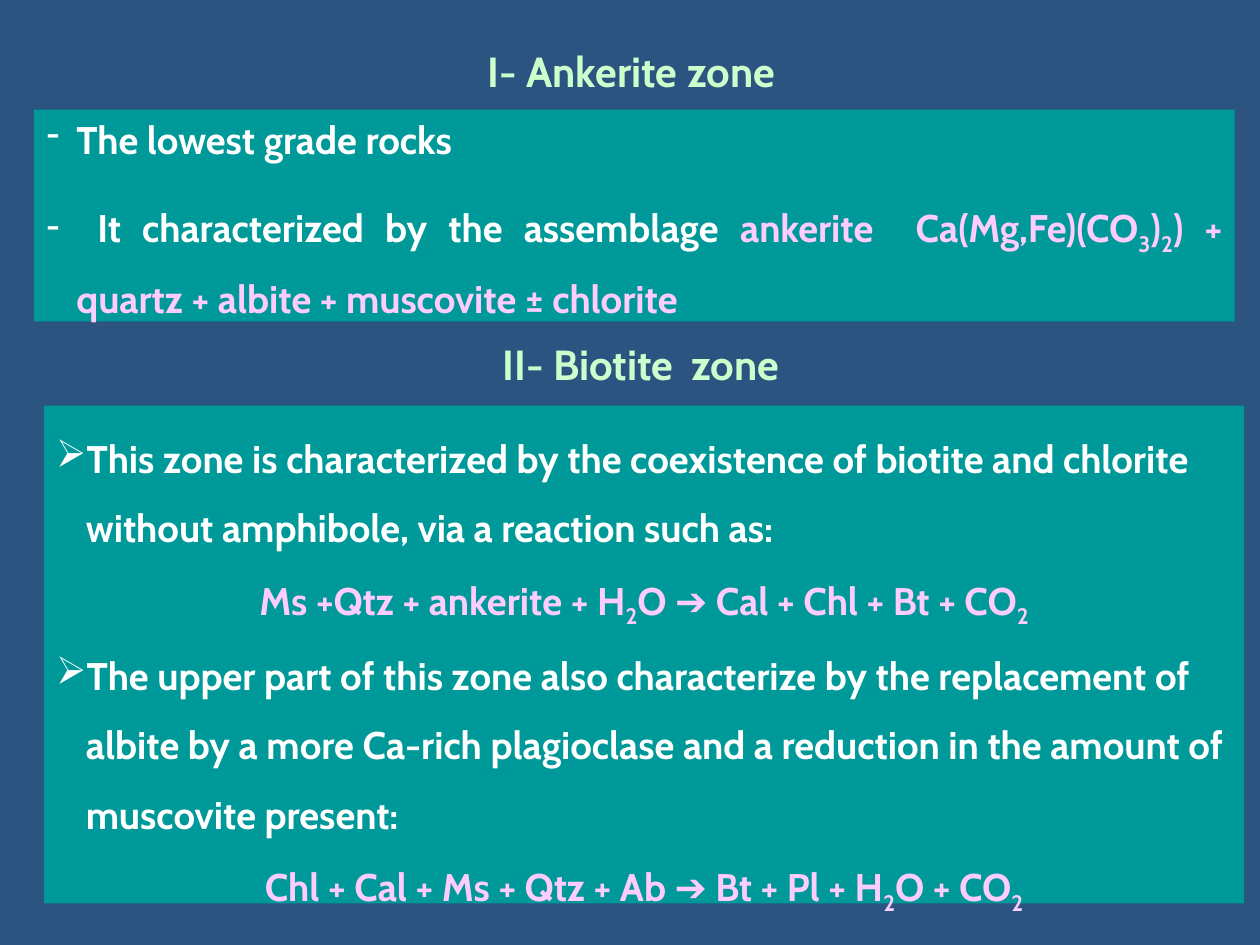
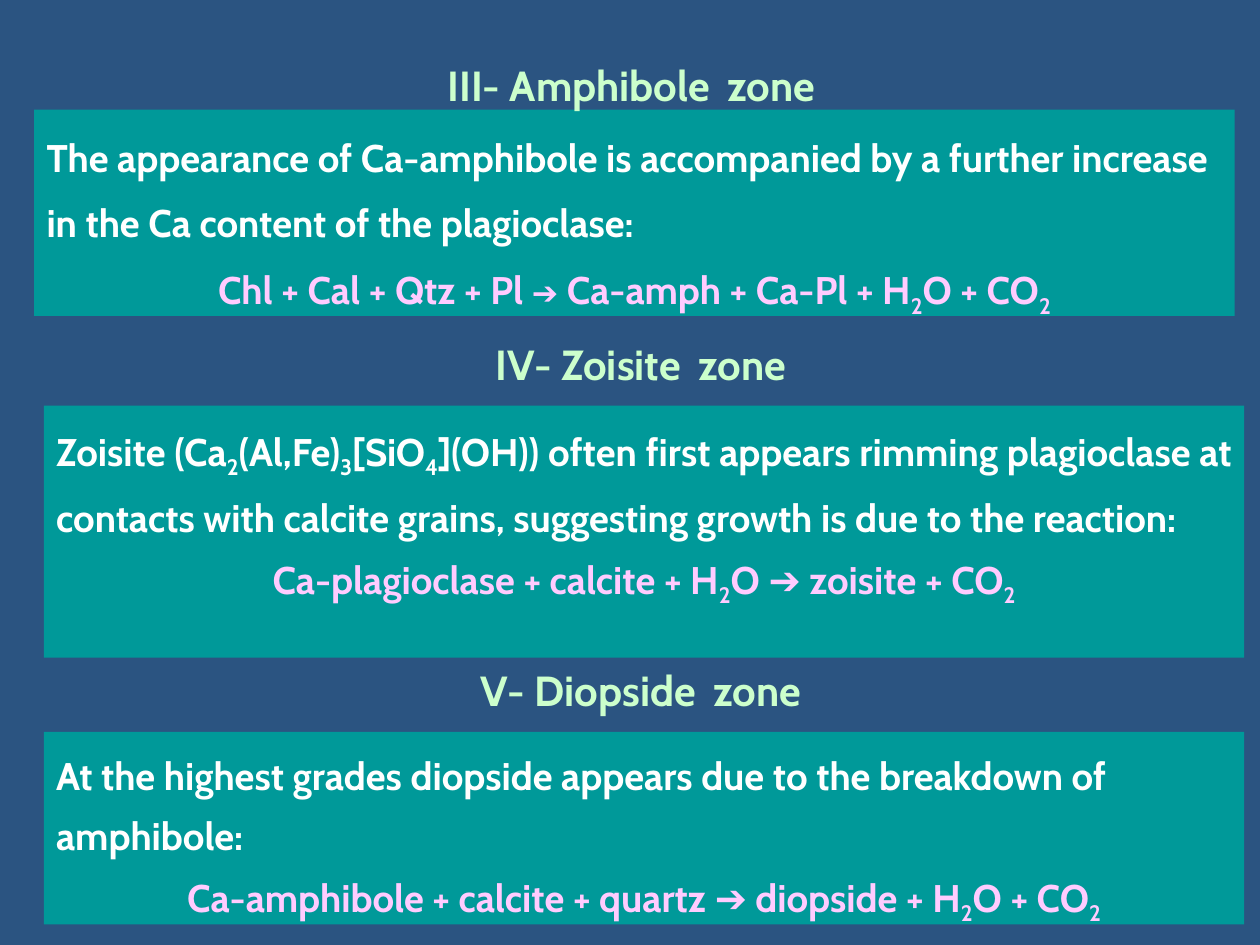
from dataclasses import dataclass

from lxml import etree
from pptx import Presentation
from pptx.dml.color import RGBColor
from pptx.enum import shapes, text
from pptx.oxml.ns import qn
from pptx.util import Pt

LEFT, MID, JUST = text.PP_ALIGN.LEFT, text.PP_ALIGN.CENTER, text.PP_ALIGN.JUSTIFY


@dataclass(frozen=True)
class Theme:
    font: str = "Cabin"
    back: str = "2B5481"
    panel: str = "009999"
    head: str = "CCFFCC"
    body: str = "FFFFFF"
    rock: str = "FFCCFF"
    head_size: int = 24
    gap_size: int = 44
    body_size: int = 22
    arrow_size: int = 18


class Deck:
    """Builds zone slides in one shared style."""

    def __init__(self, theme):
        self.theme = theme
        self.show = Presentation()
        self.show.slide_width, self.show.slide_height = Pt(720), Pt(540)

    def page(self):
        self.slide = self.show.slides.add_slide(self.show.slide_layouts[6])
        fill = self.slide.background.fill
        fill.solid()
        fill.fore_color.rgb = RGBColor.from_string(self.theme.back)

    def run(self, para, words, color, size, sub=False):
        run = para.add_run()
        run.text = words
        font = run.font
        font.name, font.size, font.bold = self.theme.font, Pt(size), True
        font.color.rgb = RGBColor.from_string(color)
        if sub:
            font._element.set("baseline", "-25000")

    def runs(self, para, words, color, size=None):
        size = size or self.theme.body_size
        first, *rest = words.split("_")
        self.run(para, first, color, size)
        for part in rest:
            self.run(para, part[0], color, size, sub=True)
            if part[1:]:
                self.run(para, part[1:], color, size)

    def bullet(self, para, mark):
        props = para._p.get_or_add_pPr()
        props.set("marL", str(Pt(17)))
        props.set("indent", str(-Pt(17)))
        etree.SubElement(props, qn("a:buChar")).set("char", mark)

    def head(self, left, top, name, wide):
        box = self.slide.shapes.add_textbox(Pt(left), Pt(top), Pt(648), Pt(38))
        frame = box.text_frame
        frame.word_wrap = True
        frame.vertical_anchor = text.MSO_ANCHOR.MIDDLE
        para = frame.paragraphs[0]
        para.alignment = MID
        color, size = self.theme.head, self.theme.head_size
        self.run(para, name, color, size)
        self.run(para, " ", color, self.theme.gap_size if wide else size)
        self.run(para, "zone", color, size)

    def panel(self, left, top, high, lines):
        box = self.slide.shapes.add_shape(
            shapes.MSO_SHAPE.RECTANGLE, Pt(left), Pt(top), Pt(686), Pt(high))
        box.shadow.inherit = False
        box.fill.solid()
        box.fill.fore_color.rgb = RGBColor.from_string(self.theme.panel)
        box.line.fill.background()
        frame = box.text_frame
        frame.word_wrap = True
        frame.vertical_anchor = text.MSO_ANCHOR.TOP
        for i, (parts, align, space, mark, before) in enumerate(lines):
            para = frame.add_paragraph() if i else frame.paragraphs[0]
            para.alignment, para.line_spacing = align, space
            para.space_before = Pt(before)
            if mark:
                self.bullet(para, mark)
            for part in parts:
                self.runs(para, *part)

    def zone(self, name, top, high, lines, first=False, wide=True):
        left = 19.5 if first else 25
        self.panel(left, top + (41 if first else 51), high, lines)
        self.head(left + 17.3, top, name, wide)

    def note(self, words, space, align=LEFT, mark=None):
        return [(words, self.theme.body)], align, space, mark, 0

    def react(self, words, space):
        return [(words, self.theme.rock)], MID, space, None, 0


def main():
    theme = Theme()
    deck = Deck(theme)
    note, react = deck.note, deck.react

    deck.page()
    blend = [
        (" It characterized by the assemblage ", theme.body),
        ("ankerite  Ca(Mg,Fe)(CO_3)_2) + quartz + albite + muscovite ± chlorite",
         theme.rock),
    ]
    deck.zone("I- Ankerite", 21.6, 121, [
        note("The lowest grade rocks", 1.0, JUST, "-"),
        (blend, JUST, 1.4, "-", 12),
    ], first=True, wide=False)
    deck.zone("II- Biotite", 180.8, 284.4, [
        note("This zone is characterized by the coexistence of biotite and "
             "chlorite without amphibole, via a reaction such as:", 1.5, mark="➢"),
        react("Ms +Qtz + ankerite + H_2O ➔ Cal + Chl + Bt + CO_2", 1.5),
        note("The upper part of this zone also characterize by the replacement "
             "of albite by a more Ca-rich plagioclase and a reduction in the "
             "amount of muscovite present:", 1.5, mark="➢"),
        react("Chl + Cal + Ms + Qtz + Ab ➔ Bt + Pl + H_2O + CO_2", 1.5),
    ])

    deck.page()
    change = [
        ("Chl + Cal + Qtz + Pl ", theme.rock),
        ("➔", theme.rock, theme.arrow_size),
        (" Ca-amph + Ca-Pl + H_2O + CO_2", theme.rock),
    ]
    deck.zone("III- Amphibole", 21.6, 118, [
        note("The appearance of Ca-amphibole is accompanied by a further "
             "increase in the Ca content of the plagioclase:", 1.4),
        (change, MID, 1.4, None, 0),
    ], first=True)
    deck.zone("IV- Zoisite", 180.8, 144, [
        note("Zoisite (Ca_2(Al,Fe)_3[SiO_4](OH)) often first appears rimming "
             "plagioclase at contacts with calcite grains, suggesting growth "
             "is due to the reaction:", 1.3, JUST),
        react("Ca-plagioclase + calcite + H_2O ➔ zoisite + CO_2", 1.3),
    ])
    deck.zone("V- Diopside", 367.2, 110, [
        note("At the highest grades diopside appears due to the breakdown of "
             "amphibole:", 1.3),
        react("Ca-amphibole + calcite + quartz ➔ diopside + H_2O + CO_2", 1.3),
    ])

    deck.show.save("out.pptx")


if __name__ == "__main__":
    main()
